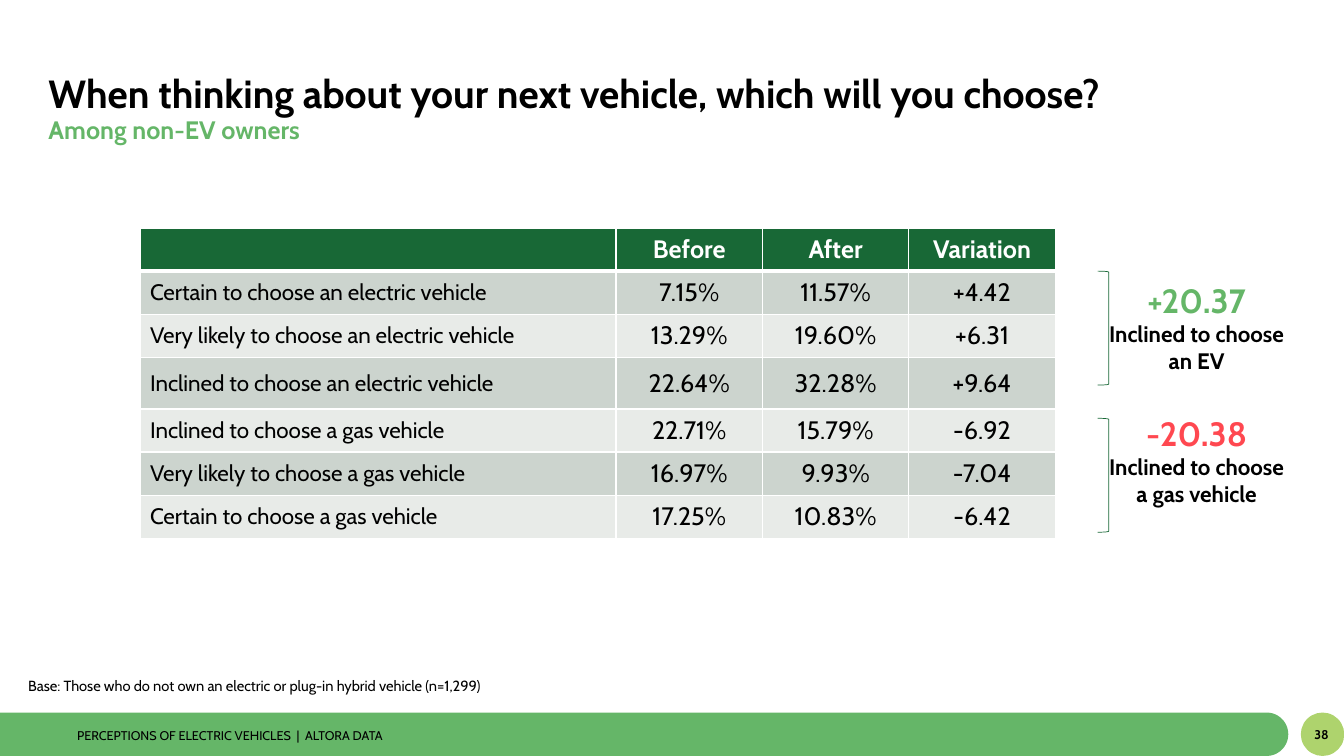
import math

from lxml import etree
from pptx import Presentation
from pptx import util as u
from pptx.dml.color import RGBColor
from pptx.enum import shapes, text
from pptx.oxml import ns

COLORS = {
    "black": "000000",
    "white": "FFFFFF",
    "leaf": "65B668",
    "lime": "AED36D",
    "forest": "186836",
    "band_dark": "CCD4CE",
    "band_light": "E8EBE8",
    "red": "FF4850",
}
LEFT, CENTER = text.PP_ALIGN.LEFT, text.PP_ALIGN.CENTER
TOP, MIDDLE = text.MSO_ANCHOR.TOP, text.MSO_ANCHOR.MIDDLE

COLUMN_WIDTHS = [340, 104.6, 104.6, 104.6]
ROW_HEIGHTS = [30.8, 30.8, 30.8, 37, 30.8, 30.8, 30.8]
ROWS = [
    ("", "Before", "After", "Variation"),
    ("Certain to choose an electric vehicle", "7.15%", "11.57%", "+4.42"),
    ("Very likely to choose an electric vehicle", "13.29%", "19.60%", "+6.31"),
    ("Inclined to choose an electric vehicle", "22.64%", "32.28%", "+9.64"),
    ("Inclined to choose a gas vehicle", "22.71%", "15.79%", "-6.92"),
    ("Very likely to choose a gas vehicle", "16.97%", "9.93%", "-7.04"),
    ("Certain to choose a gas vehicle", "17.25%", "10.83%", "-6.42"),
]
CALLOUTS = [
    (196.6, 193.7, "+20.37", "leaf", "Inclined to choose an EV"),
    (291.6, 298.8, "-20.38", "red", "Inclined to choose a gas vehicle"),
]


class SurveyPage:
    """Holds the font, the colours and the current slide."""

    def __init__(self, page, font="Cabin"):
        self.page = page
        self.font = font

    def color(self, name):
        return RGBColor.from_string(COLORS[name])

    def fill_text(self, frame, lines, align=LEFT, anchor=TOP, spacing=1.0):
        """Fill a frame with (words, size, colour, bold) lines."""
        frame.word_wrap = True
        frame.vertical_anchor = anchor
        for index, (words, size, color, bold) in enumerate(lines):
            para = frame.paragraphs[0] if index == 0 else frame.add_paragraph()
            para.text = words
            para.alignment = align
            para.line_spacing = spacing
            para.space_before = u.Pt(0)
            para.font.name = self.font
            para.font.size = u.Pt(size)
            para.font.bold = bold
            para.font.color.rgb = self.color(color)

    def title(self, bounds, lines):
        box = self.page.shapes.title
        box.left, box.top, box.width, box.height = map(u.Pt, bounds)
        box.text_frame.auto_size = text.MSO_AUTO_SIZE.NONE
        self.fill_text(box.text_frame, lines, anchor=MIDDLE, spacing=0.9)

    def text(self, bounds, lines, **style):
        box = self.page.shapes.add_textbox(*map(u.Pt, bounds))
        self.fill_text(box.text_frame, lines, **style)

    def paint(self, shape, fill=None, line=None):
        shape.shadow.inherit = False
        if fill:
            shape.fill.solid()
            shape.fill.fore_color.rgb = self.color(fill)
        else:
            shape.fill.background()
        if line:
            shape.line.color.rgb = self.color(line)
            shape.line.width = u.Pt(0.5)
        else:
            shape.line.fill.background()

    def shape(self, kind, bounds, **look):
        self.paint(self.page.shapes.add_shape(kind, *map(u.Pt, bounds)), **look)

    def footer_band(self, top, right, height, fill):
        """Draw a band from the left edge with a rounded right end."""
        radius = height / 2
        angles = [math.radians(degree) for degree in range(-90, 91, 5)]
        curve = [
            (right - radius + radius * math.cos(angle), top + radius + radius * math.sin(angle))
            for angle in angles
        ]
        builder = self.page.shapes.build_freeform(0, u.Pt(top))
        points = curve + [(0, top + height)]
        builder.add_line_segments([(u.Pt(x), u.Pt(y)) for x, y in points])
        self.paint(builder.convert_to_shape(), fill=fill)

    def borders(self, cell, widths):
        """Give a cell white borders, with widths by side letter."""
        properties = cell._tc.get_or_add_tcPr()
        for index, side in enumerate("LRTB"):
            line = etree.Element(ns.qn(f"a:ln{side}"), w=str(u.Pt(widths.get(side, 1))))
            fill = etree.SubElement(line, ns.qn("a:solidFill"))
            etree.SubElement(fill, ns.qn("a:srgbClr"), val=COLORS["white"])
            properties.insert(index, line)

    def table(self, left, top, rows, widths, heights):
        bounds = (left, top, sum(widths), sum(heights))
        frame = self.page.shapes.add_table(len(rows), len(widths), *map(u.Pt, bounds))
        table = frame.table
        table.horz_banding = False
        for column, width in zip(table.columns, widths):
            column.width = u.Pt(width)
        for row, height in zip(table.rows, heights):
            row.height = u.Pt(height)
        for r, values in enumerate(rows):
            header = r == 0
            fill = "forest" if header else ("band_light", "band_dark")[r % 2]
            for c, value in enumerate(values):
                cell = table.cell(r, c)
                cell.fill.solid()
                cell.fill.fore_color.rgb = self.color(fill)
                self.borders(cell, {0: {"B": 3}, 1: {"T": 3}}.get(r, {}))
                cell.vertical_anchor = MIDDLE
                if value:
                    size = 16 if c == 0 else 18
                    color = "white" if header else "black"
                    self.fill_text(
                        cell.text_frame,
                        [(value, size, color, header)],
                        align=LEFT if c == 0 else CENTER,
                        anchor=None,
                    )

    def callout(self, text_top, bracket_top, change, color, label):
        lines = [(change, 24, color, True), (label, 16, "black", True)]
        self.text((783.4, text_top, 142.6, 75), lines, align=CENTER)
        bracket = shapes.MSO_SHAPE.RIGHT_BRACKET
        self.shape(bracket, (784, bracket_top, 8, 81.4), line="forest")


def main():
    deck = Presentation()
    deck.slide_width, deck.slide_height = u.Pt(960), u.Pt(540)
    survey = SurveyPage(deck.slides.add_slide(deck.slide_layouts[5]))

    survey.footer_band(509, 920.2, 31, "leaf")
    survey.shape(shapes.MSO_SHAPE.OVAL, (929.2, 509, 31, 31), fill="lime")
    survey.text(
        (923.8, 509.8, 40.3, 31),
        [("38", 9, "black", True)],
        align=CENTER, anchor=MIDDLE, spacing=0.9,
    )
    survey.text(
        (48, 517.4, 689, 15.1),
        [("PERCEPTIONS OF ELECTRIC VEHICLES  |  ALTORA DATA", 9, "black", False)],
        spacing=0.9,
    )
    survey.title(
        (27.4, 56.9, 878.4, 43.2),
        [
            ("When thinking about your next vehicle, which will you choose?", 28, "black", True),
            ("Among non-EV owners", 18, "leaf", True),
        ],
    )
    base = "Base: Those who do not own an electric or plug-in hybrid vehicle (n=1,299)"
    survey.text((13, 481.7, 760.3, 23.8), [(base, 10.5, "black", False)], spacing=0.9)
    survey.table(100, 162.8, ROWS, COLUMN_WIDTHS, ROW_HEIGHTS)
    for callout in CALLOUTS:
        survey.callout(*callout)

    deck.save("out.pptx")


if __name__ == "__main__":
    main()
